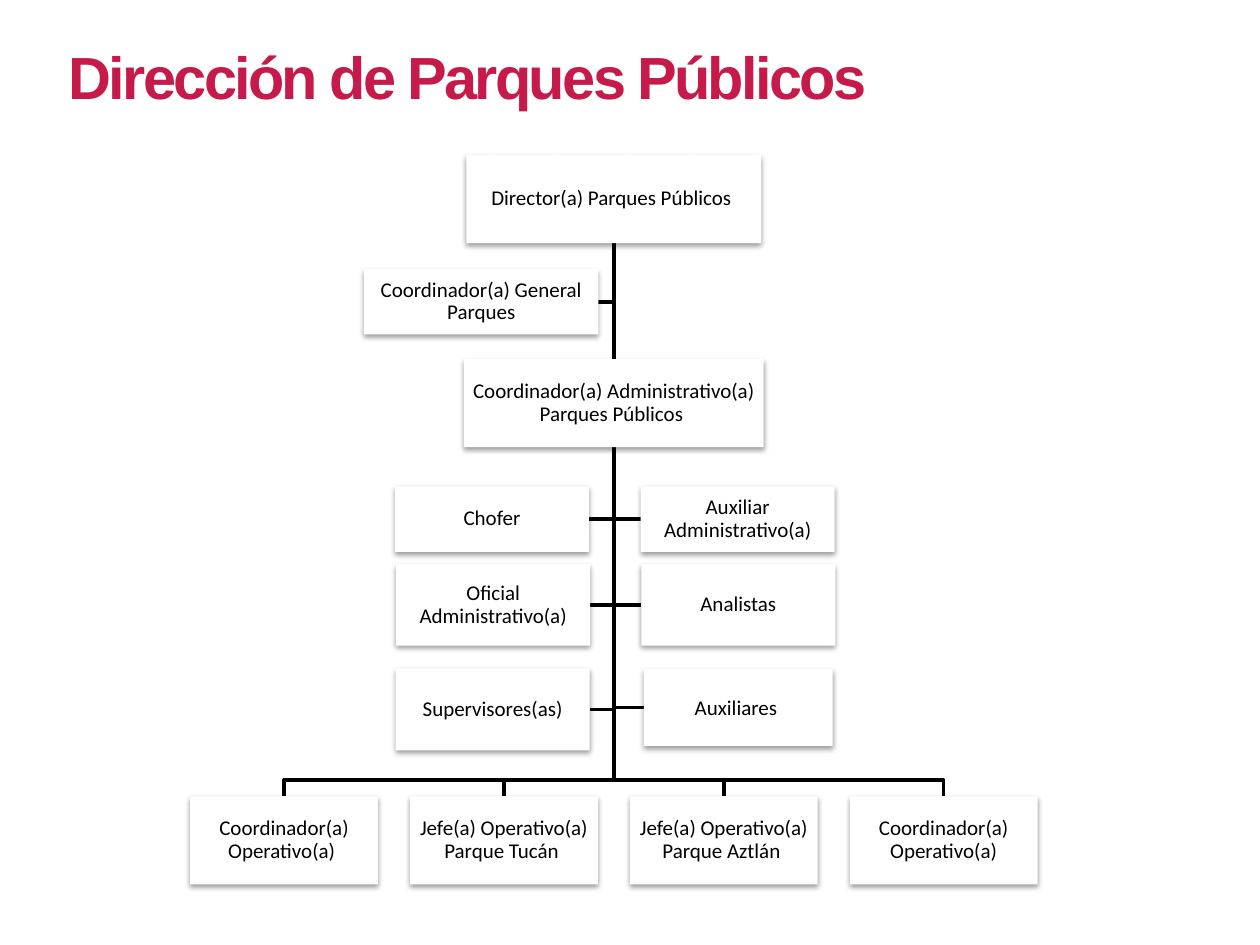
from lxml import etree
from pptx import Presentation
from pptx.dml.color import RGBColor
from pptx.enum.shapes import MSO_CONNECTOR, MSO_SHAPE
from pptx.enum.text import MSO_ANCHOR, MSO_AUTO_SIZE, PP_ALIGN
from pptx.oxml import parse_xml
from pptx.oxml.ns import qn
from pptx.util import Inches, Pt

RECTANGLE = MSO_SHAPE.RECTANGLE
STRAIGHT = MSO_CONNECTOR.STRAIGHT
MIDDLE, CENTER, LEFT = MSO_ANCHOR.MIDDLE, PP_ALIGN.CENTER, PP_ALIGN.LEFT
TOP_SIDE, BOTTOM_SIDE = 0, 2
SHADOW = (
    '<a:outerShdw xmlns:a="http://schemas.openxmlformats.org/drawingml/2006/main" '
    'blurRad="40000" dist="20000" dir="5400000" rotWithShape="0">'
    '<a:srgbClr val="000000"><a:alpha val="38000"/></a:srgbClr></a:outerShdw>'
)

prs = Presentation()
prs.slide_width, prs.slide_height = Inches(10), Inches(7.5)
COL, ROW = prs.slide_width / 100, prs.slide_height / 75
slide = prs.slides.add_slide(prs.slide_layouts[5])


def add_post(role, left, top, width, height, spacing=0.9):
    """Draw one post of the chart, placed in grid columns and rows."""
    post = slide.shapes.add_shape(
        RECTANGLE, round(left * COL), round(top * ROW), round(width * COL), round(height * ROW))
    post.fill.solid()
    post.fill.fore_color.rgb = RGBColor.from_string("FFFFFF")
    post.line.fill.background()
    post.shadow.inherit = False
    post._element.spPr.find(qn("a:effectLst")).append(parse_xml(SHADOW))
    frame = post.text_frame
    frame.word_wrap = True
    frame.vertical_anchor = MIDDLE
    frame.margin_left = frame.margin_right = frame.margin_top = frame.margin_bottom = Inches(0.01)
    frame.text = role
    paragraph = frame.paragraphs[0]
    paragraph.alignment = CENTER
    paragraph.line_spacing = spacing
    font = paragraph.runs[0].font
    font.name, font.size = "Calibri", Pt(12)
    font.color.rgb = RGBColor.from_string("000000")
    return post


def add_bent_link(*stops):
    """Draw a reporting line through (column, row) stops."""
    start, *turns = [(round(x * COL), round(y * ROW)) for x, y in stops]
    builder = slide.shapes.build_freeform(*start)
    builder.add_line_segments(turns, close=False)
    link = builder.convert_to_shape()
    link.fill.background()
    link.line.color.rgb = RGBColor.from_string("000000")
    link.line.width = Pt(2)
    link.shadow.inherit = False


heading = slide.shapes.title
heading.left, heading.top = round(4.45 * COL), round(2.65 * ROW)
heading.width, heading.height = round(77.9 * COL), round(6.7 * ROW)
heading.text_frame.text = "Dirección de Parques Públicos"
heading.text_frame.word_wrap = True
heading.text_frame.auto_size = MSO_AUTO_SIZE.NONE
heading.text_frame.vertical_anchor = MIDDLE
heading.text_frame.paragraphs[0].alignment = LEFT
heading_run = heading.text_frame.paragraphs[0].runs[0]
heading_run.font.name, heading_run.font.size, heading_run.font.bold = "Arial", Pt(34), True
heading_run.font.color.rgb = RGBColor.from_string("C51A4A")
heading_run._r.get_or_add_rPr().set("spc", "-150")

TRUNK, BUS = 48.72, 61.9
DIRECTOR_TOP, ADMIN_TOP, OPERATOR_TOP, TALL = 12.3, 28.5, 63.2, 7
DIRECTOR_END, ADMIN_END = DIRECTOR_TOP + TALL, ADMIN_TOP + TALL
PITCH, POST_WIDTH = 17.45, 14.9

supports = [
    ("Coordinador(a) General Parques", 28.9, 21.35, 18.6, 5.2, 0.9),
    ("Chofer", 31.35, 38.6, 15.4, 5.2, 0.9),
    ("Auxiliar Administrativo(a)", 50.85, 38.6, 15.4, 5.2, 0.9),
    ("Oficial Administrativo(a)", 31.45, 44.75, 15.4, 6.5, 0.9),
    ("Analistas", 50.9, 44.75, 15.4, 6.5, 0.9),
    ("Supervisores(as)", 31.4, 53.05, 15.4, 6.5, 0.9),
    ("Auxiliares ", 51.1, 53.1, 15, 6.1, 1.0),
]
operators = [
    "Coordinador(a) Operativo(a) ",
    "Jefe(a) Operativo(a) Parque Tucán ",
    "Jefe(a) Operativo(a) Parque Aztlán ",
    "Coordinador(a) Operativo(a)",
]
operator_centers = [TRUNK + (i - 1.5) * PITCH for i in range(len(operators))]

# Reporting lines lie behind the posts
for role, left, top, width, height, spacing in supports:
    level = top + height / 2
    source = DIRECTOR_END if level < ADMIN_TOP else ADMIN_END
    near_side = left + width if left < TRUNK else left
    add_bent_link((TRUNK, source), (TRUNK, level), (near_side, level))
for center in operator_centers:
    add_bent_link((TRUNK, ADMIN_END), (TRUNK, BUS), (center, BUS), (center, OPERATOR_TOP))
trunk_link = slide.shapes.add_connector(
    STRAIGHT, round(TRUNK * COL), round(DIRECTOR_END * ROW),
    round(TRUNK * COL), round(ADMIN_TOP * ROW))
trunk_link.line.color.rgb = RGBColor.from_string("000000")
trunk_link.line.width = Pt(2)
etree.SubElement(trunk_link._element.spPr, qn("a:effectLst"))

# Posts
director = add_post("Director(a) Parques Públicos ", TRUNK - 11.7, DIRECTOR_TOP, 23.4, TALL)
administrator = add_post(
    "Coordinador(a) Administrativo(a) Parques Públicos ", TRUNK - 11.9, ADMIN_TOP, 23.8, TALL)
trunk_link.begin_connect(director, BOTTOM_SIDE)
trunk_link.end_connect(administrator, TOP_SIDE)
for role, center in zip(operators, operator_centers):
    add_post(role, center - POST_WIDTH / 2, OPERATOR_TOP, POST_WIDTH, TALL)
for support in supports:
    add_post(*support)

prs.save("out.pptx")
